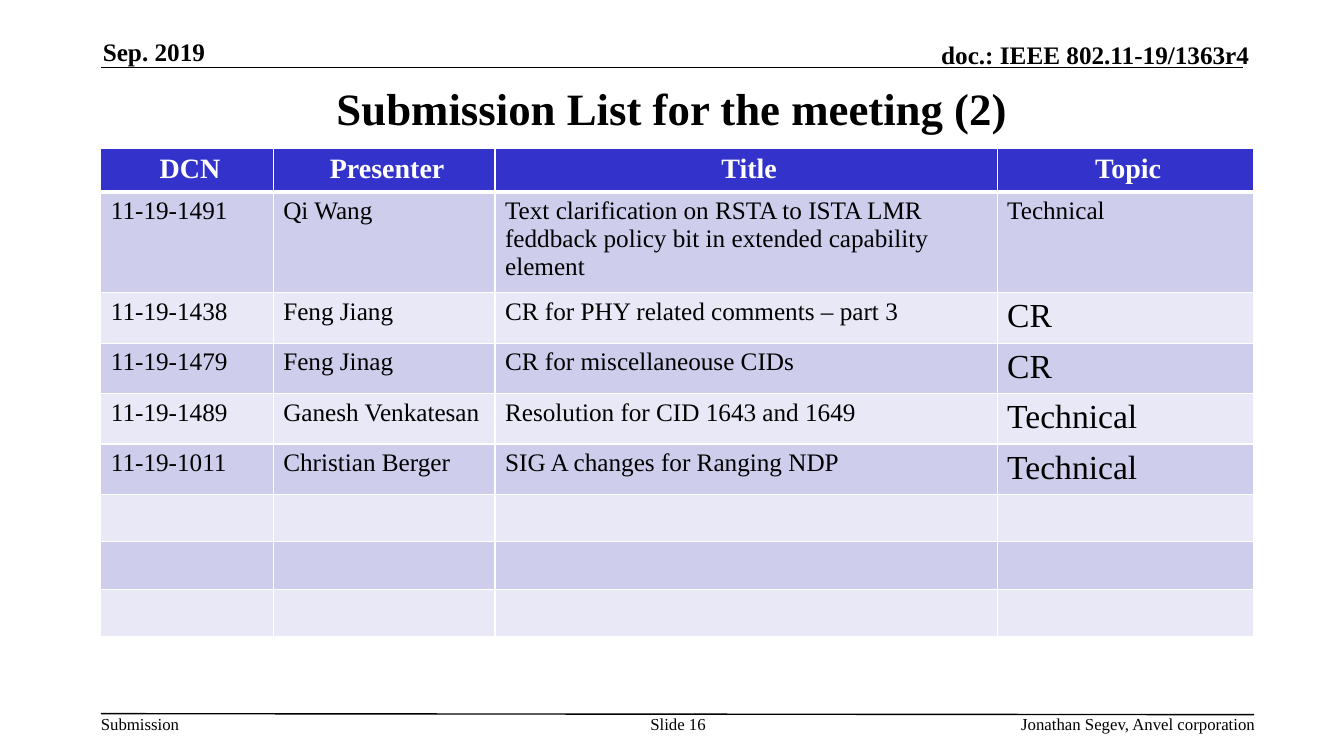
from dataclasses import dataclass

from lxml import etree
from pptx import Presentation
from pptx.dml.color import RGBColor
from pptx.enum.shapes import MSO_CONNECTOR
from pptx.enum.text import MSO_ANCHOR as Anchor, PP_ALIGN as Align
from pptx.oxml.ns import qn
from pptx.util import Inches, Pt

BLACK = RGBColor(0x00, 0x00, 0x00)
WHITE = RGBColor(0xFF, 0xFF, 0xFF)
HEADER_BLUE = RGBColor(0x33, 0x33, 0xCC)
BAND_DARK = RGBColor(0xCE, 0xCE, 0xEC)
BAND_LIGHT = RGBColor(0xE8, 0xE8, 0xF6)
FONT = "Times New Roman"


@dataclass
class Label:
    text: str
    left: float
    top: float
    width: float
    height: float
    size: int = 12
    bold: bool = False
    align: Align = Align.LEFT
    anchor: Anchor = Anchor.TOP
    wrap: bool = True


@dataclass
class Rule:
    x1: float
    y1: float
    x2: float
    y2: float


@dataclass
class Submission:
    dcn: str = ""
    presenter: str = ""
    title: str = ""
    topic: str = ""
    topic_size: int = 24
    height: float = 0.47


RULES = [Rule(1, 0.67, 12.33, 0.67), Rule(1, 7.08, 12.44, 7.09)]
LABELS = [
    Label("Submission", 1, 7.08, 0.79, 0.2, wrap=False),
    Label("doc.: IEEE 802.11-19/1363r4", 7.29, 0.39, 5.1, 0.3, 18, True,
          Align.RIGHT, Anchor.BOTTOM),
    Label("Submission List for the meeting (2)", 1, 0.75, 11.33, 0.64, 32, True,
          Align.CENTER, Anchor.MIDDLE),
    Label("Slide 16", 6.34, 7.08, 0.77, 0.4, align=Align.CENTER),
    Label("Jonathan Segev, Anvel corporation", 7.81, 7.08, 4.64, 0.2, align=Align.RIGHT),
    Label("Sep. 2019", 1.02, 0.36, 2.73, 0.3, 18, True, anchor=Anchor.BOTTOM),
]
HEADINGS = ["DCN", "Presenter", "Title", "Topic"]
COLUMN_WIDTHS = [1.71, 2.2, 4.98, 2.54]
HEADER_HEIGHT = 0.4
SUBMISSIONS = [
    Submission("11-19-1491", "Qi Wang",
               "Text clarification on RSTA to ISTA LMR feddback policy bit in "
               "extended capability element", "Technical", 18, 0.93),
    Submission("11-19-1438", "Feng Jiang", "CR for PHY related comments – part 3", "CR",
               height=0.5),
    Submission("11-19-1479", "Feng Jinag", "CR for miscellaneouse CIDs", "CR"),
    Submission("11-19-1489", "Ganesh Venkatesan", "Resolution for CID 1643 and 1649",
               "Technical"),
    Submission("11-19-1011", "Christian Berger", "SIG A changes for Ranging NDP",
               "Technical"),
    Submission(), Submission(), Submission(),
]


def add_run(p, text: str, size: int, color: RGBColor = BLACK, bold: bool = False) -> None:
    r = p.add_run()
    r.text = text
    r.font.name = FONT
    r.font.size = Pt(size)
    r.font.bold = bold
    r.font.color.rgb = color


def add_label(slide, label: Label) -> None:
    box = slide.shapes.add_textbox(Inches(label.left), Inches(label.top),
                                   Inches(label.width), Inches(label.height))
    tf = box.text_frame
    tf.margin_left = tf.margin_right = tf.margin_top = tf.margin_bottom = 0
    tf.word_wrap = label.wrap
    tf.vertical_anchor = label.anchor
    p = tf.paragraphs[0]
    p.alignment = label.align
    add_run(p, label.text, label.size, bold=label.bold)


def add_rule(slide, rule: Rule) -> None:
    line = slide.shapes.add_connector(MSO_CONNECTOR.STRAIGHT, Inches(rule.x1),
                                      Inches(rule.y1), Inches(rule.x2), Inches(rule.y2))
    line.line.color.rgb = BLACK
    line.line.width = Pt(1)
    etree.SubElement(line._element.spPr, qn("a:effectLst"))


def style_cell(cell, fill: RGBColor, top: int = 1, bottom: int = 1) -> None:
    """Set white borders (widths in points) and the cell fill."""
    tc_pr = cell._tc.get_or_add_tcPr()
    for side, width in (("L", 1), ("R", 1), ("T", top), ("B", bottom)):
        ln = etree.SubElement(tc_pr, qn(f"a:ln{side}"), w=str(Pt(width)))
        solid = etree.SubElement(ln, qn("a:solidFill"))
        etree.SubElement(solid, qn("a:srgbClr"), val=str(WHITE))
    cell.fill.solid()
    cell.fill.fore_color.rgb = fill


def add_submission_table(slide) -> None:
    heights = [HEADER_HEIGHT] + [s.height for s in SUBMISSIONS]
    table = slide.shapes.add_table(len(heights), len(HEADINGS), Inches(1), Inches(1.47),
                                   Inches(sum(COLUMN_WIDTHS)), Inches(sum(heights))).table
    for column, width in zip(table.columns, COLUMN_WIDTHS):
        column.width = Inches(width)
    for row, height in zip(table.rows, heights):
        row.height = Inches(height)

    for col, heading in enumerate(HEADINGS):
        cell = table.cell(0, col)
        style_cell(cell, HEADER_BLUE, bottom=3)
        cell.margin_right = Inches(0.04)
        p = cell.text_frame.paragraphs[0]
        p.alignment = Align.CENTER
        add_run(p, heading, 20, WHITE, True)

    for row, sub in enumerate(SUBMISSIONS, start=1):
        texts = [(sub.dcn, 18), (sub.presenter, 18), (sub.title, 18),
                 (sub.topic, sub.topic_size)]
        for col, (text, size) in enumerate(texts):
            cell = table.cell(row, col)
            style_cell(cell, BAND_DARK if row % 2 else BAND_LIGHT, top=3 if row == 1 else 1)
            if text:
                add_run(cell.text_frame.paragraphs[0], text, size)


def main() -> None:
    prs = Presentation()
    prs.slide_width, prs.slide_height = Inches(13.33), Inches(7.5)
    slide = prs.slides.add_slide(prs.slide_layouts[6])
    for rule in RULES:
        add_rule(slide, rule)
    for label in LABELS:
        add_label(slide, label)
    add_submission_table(slide)
    prs.save("out.pptx")


if __name__ == "__main__":
    main()
